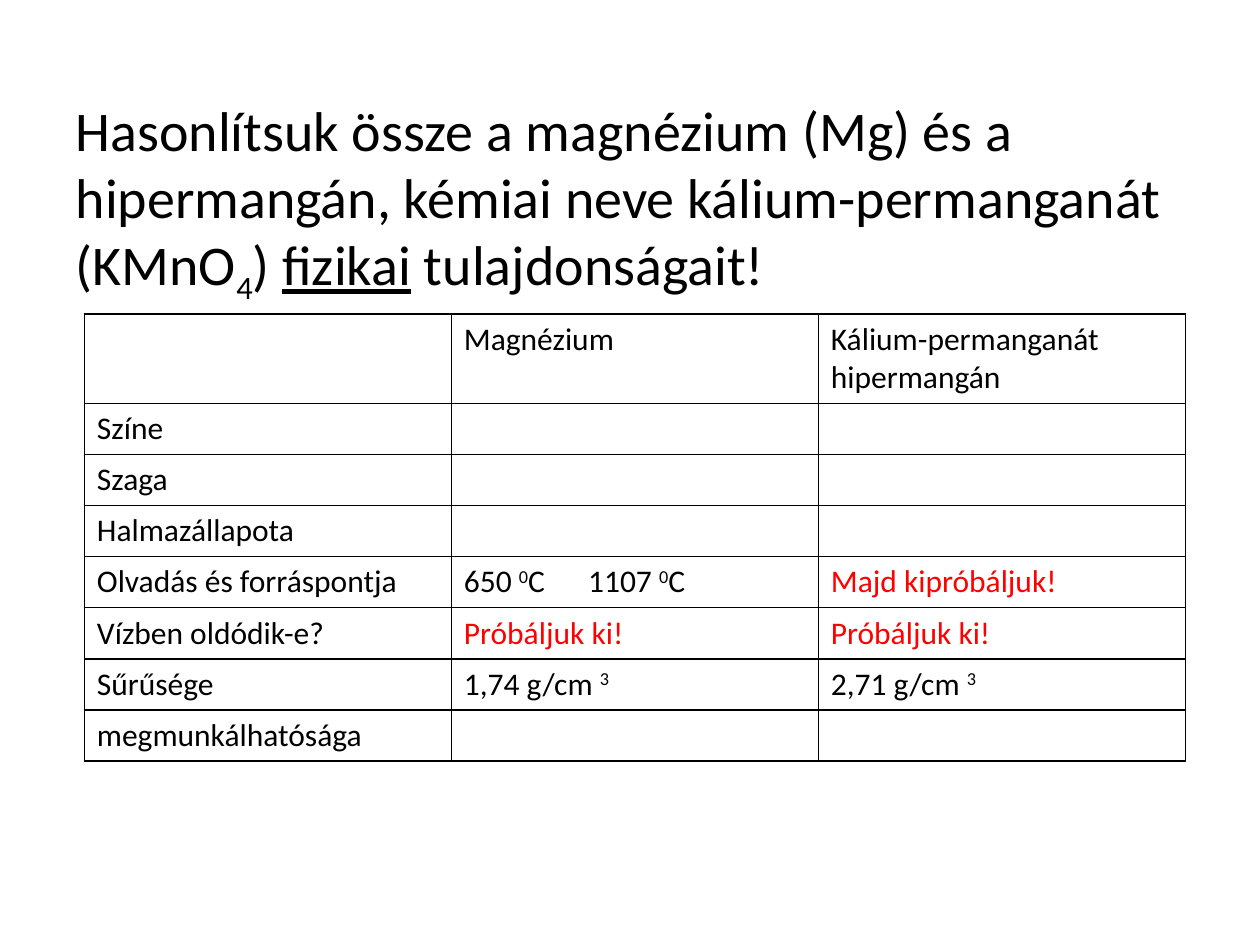
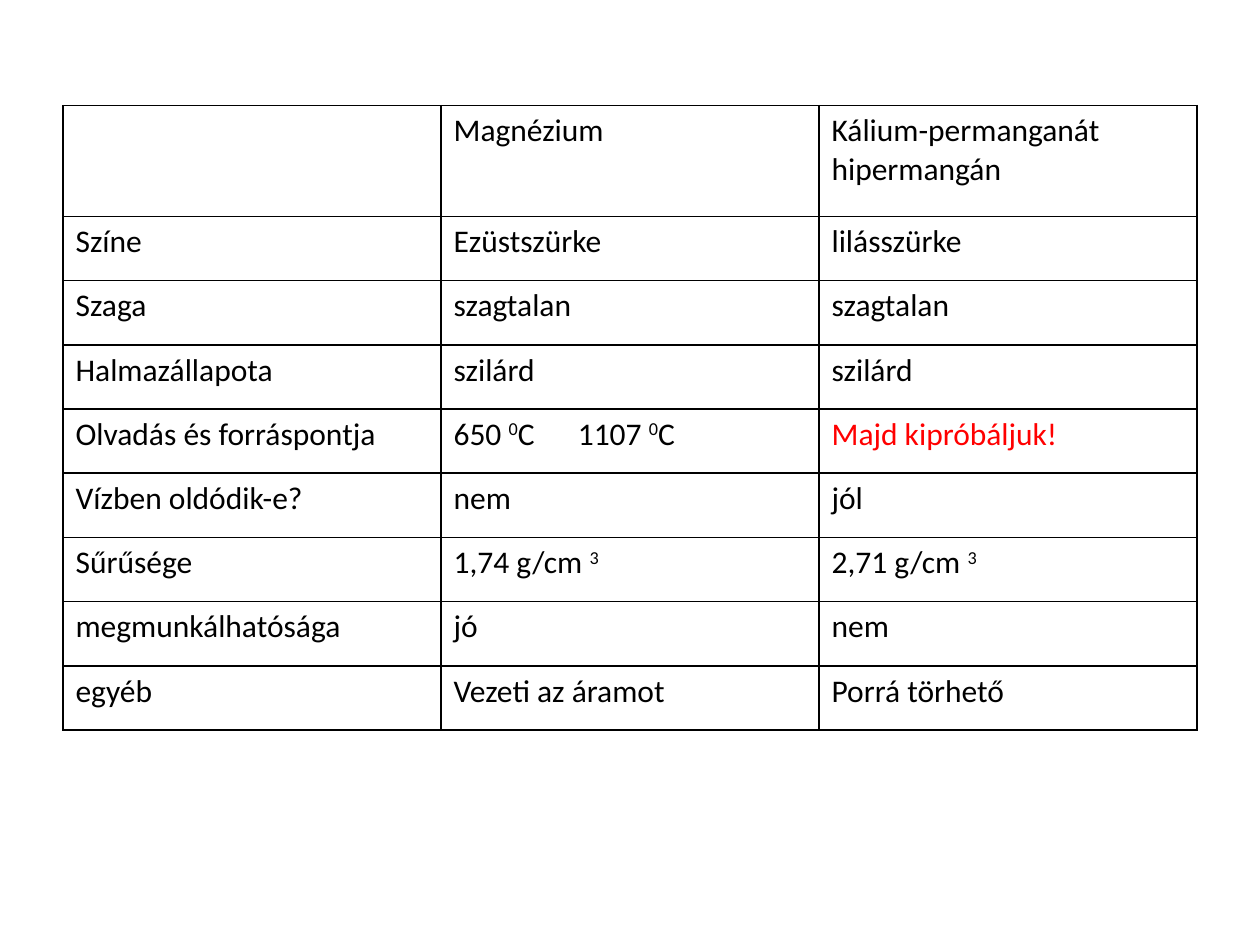
from dataclasses import dataclass

from lxml import etree
from pptx import Presentation
from pptx.dml.color import RGBColor
from pptx.enum.text import MSO_ANCHOR, MSO_AUTO_SIZE, PP_ALIGN
from pptx.oxml.ns import qn
from pptx.util import Pt

TOP = MSO_ANCHOR.TOP
FIXED = MSO_AUTO_SIZE.NONE
LEFT = PP_ALIGN.LEFT
TITLED, BLANK = 5, 6


@dataclass(frozen=True)
class Theme:
    font: str = "Calibri"
    ink: str = "000000"
    alert: str = "FF0000"
    paper: str = "FFFFFF"
    head: int = 32
    body: int = 18
    rule: int = 1
    tab: int = 71


def write(para, text, size, color, font, base=0, under=False):
    run = para.add_run()
    run.text = text
    run.font.name = font
    run.font.size = Pt(size)
    run.font.color.rgb = RGBColor.from_string(color)
    if under:
        run.font.underline = True
    if base:
        run.font._element.set("baseline", str(base * 1000))


class Deck:
    def __init__(self, theme):
        self.theme = theme
        self.show = Presentation()
        self.show.slide_width, self.show.slide_height = Pt(720), Pt(540)
        self.slide = None

    def page(self, layout):
        self.slide = self.show.slides.add_slide(self.show.slide_layouts[layout])
        fill = self.slide.background.fill
        fill.solid()
        fill.fore_color.rgb = RGBColor.from_string(self.theme.paper)

    def title(self, parts, left, top, width, height):
        theme = self.theme
        box = self.slide.shapes.title
        box.left, box.top, box.width, box.height = map(Pt, (left, top, width, height))
        frame = box.text_frame
        frame.word_wrap = True
        frame.auto_size = FIXED
        frame.vertical_anchor = TOP
        para = frame.paragraphs[0]
        para.alignment = LEFT
        for text, style in parts:
            write(para, text, theme.head, theme.ink, theme.font, **style)

    def border(self, cell):
        props = cell._tc.get_or_add_tcPr()
        for side in ("lnL", "lnR", "lnT", "lnB"):
            line = etree.SubElement(props, qn(f"a:{side}"), w=str(Pt(self.theme.rule)))
            fill = etree.SubElement(line, qn("a:solidFill"))
            etree.SubElement(fill, qn("a:srgbClr"), val=self.theme.ink)

    def tab(self, para):
        stops = etree.SubElement(para._p.get_or_add_pPr(), qn("a:tabLst"))
        etree.SubElement(stops, qn("a:tab"), pos=str(Pt(self.theme.tab)), algn="l")

    def cell(self, cell, text):
        theme = self.theme
        self.border(cell)
        cell.fill.background()
        color = theme.alert if text in TRIALS else theme.ink
        frame = cell.text_frame
        for i, line in enumerate(text.split("\n")):
            para = frame.add_paragraph() if i else frame.paragraphs[0]
            if "\t" in line:
                self.tab(para)
            for j, part in enumerate(line.split("^")):
                if part:
                    write(para, part, theme.body, color, theme.font, base=30 * (j % 2))

    def table(self, rows, left, top, width, first, other):
        heights = [first] + [other] * (len(rows) - 1)
        frame = self.slide.shapes.add_table(
            len(rows), len(rows[0]), Pt(left), Pt(top), Pt(width), Pt(sum(heights)))
        grid = frame.table
        grid.first_row = grid.horz_banding = False
        for col in grid.columns:
            col.width = Pt(width / len(rows[0]))
        for r, (texts, height) in enumerate(zip(rows, heights)):
            grid.rows[r].height = Pt(height)
            for c, text in enumerate(texts):
                self.cell(grid.cell(r, c), text)


LATER, TRY = "Majd kipróbáljuk!", "Próbáljuk ki!"
TRIALS = (LATER, TRY)
HEADS = ("", "Magnézium", "Kálium-permanganát\nhipermangán")
TRAITS = ("Színe", "Szaga", "Halmazállapota", "Olvadás és forráspontja",
          "Vízben oldódik-e?", "Sűrűsége", "megmunkálhatósága", "egyéb")
KNOWN = {
    "Olvadás és forráspontja": ("650 ^0^C\t1107 ^0^C", LATER),
    "Sűrűsége": ("1,74 g/cm ^3", "2,71 g/cm ^3"),
}
TASK = {"Vízben oldódik-e?": (TRY, TRY)}
SOLVED = {
    "Színe": ("Ezüstszürke", "lilásszürke"),
    "Szaga": ("szagtalan", "szagtalan"),
    "Halmazállapota": ("szilárd", "szilárd"),
    "Vízben oldódik-e?": ("nem", "jól"),
    "megmunkálhatósága": ("jó", "nem"),
    "egyéb": ("Vezeti az áramot", "Porrá törhető"),
}
PROMPT = (
    ("Hasonlítsuk össze a magnézium (Mg) és a hipermangán, "
     "kémiai neve kálium-permanganát (KMnO", {}),
    ("4", {"base": -25}),
    (") ", {}),
    ("fizikai", {"under": True}),
    (" tulajdonságait!", {}),
)


def fill_in(traits, facts):
    facts = KNOWN | facts
    return [HEADS] + [(trait, *facts.get(trait, ("", ""))) for trait in traits]


def main():
    deck = Deck(Theme())
    deck.page(TITLED)
    deck.title(PROMPT, left=36, top=51, width=648, height=128)
    deck.table(fill_in(TRAITS[:-1], TASK), left=48.2, top=179.3, width=629.2,
               first=51.2, other=29.2)
    deck.page(BLANK)
    deck.table(fill_in(TRAITS, SOLVED), left=36, top=60.3, width=648,
               first=63.4, other=36.7)
    deck.show.save("out.pptx")


if __name__ == "__main__":
    main()
